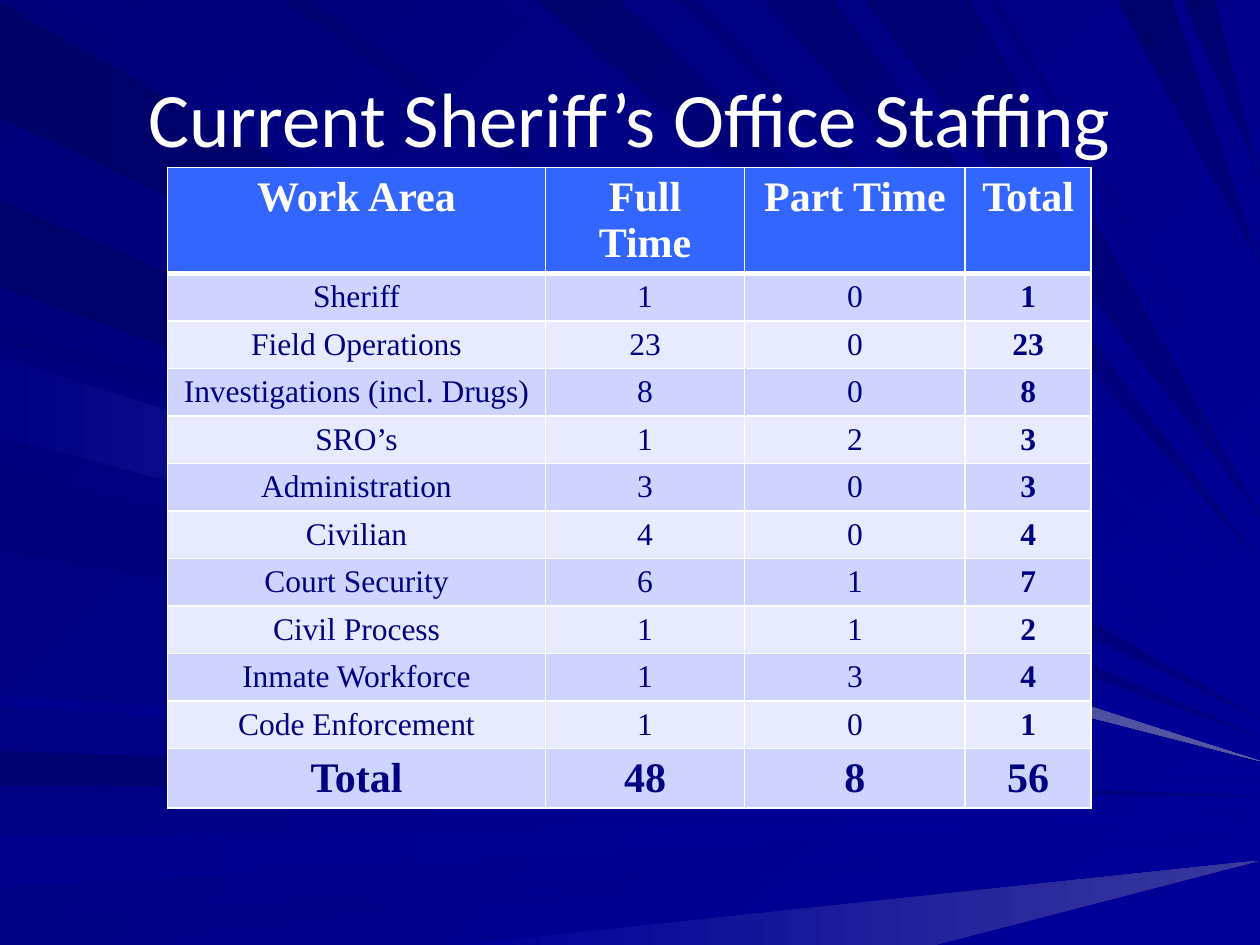
import dataclasses

import lxml.etree
import pptx
import pptx.dml.color
import pptx.enum.text
import pptx.oxml.ns
import pptx.util


@dataclasses.dataclass(frozen=True)
class Theme:
    title_font: str = "Calibri"
    table_font: str = "Times New Roman"
    title_size: int = 44
    strong_size: int = 24
    body_size: int = 18
    white: str = "FFFFFF"
    navy: str = "000080"
    blue: str = "000099"
    haze: str = "39399E"
    glow: str = "5A5AA6"
    header: str = "3366FF"
    bands: tuple = ("CED3FF", "E8EAFF")
    background: str = "000078"
    thin: int = 1
    thick: int = 3


THEME = Theme()

# The slide is a grid of 1000 columns by 750 rows
UNIT = pptx.util.Inches(0.01)
COLUMNS, ROWS = 1000, 750

TITLE_BOX = (50, 30, 900, 125)
TABLE_BOX = (133, 133, 733, 508)
COLUMN_SHARES = (3, 1.58, 1.75, 1)
HEADER_SHARE, BODY_SHARE, TOTAL_SHARE = 84, 37.7, 47

STAFFING = [
    ("Work Area", "Full Time", "Part Time", "Total"),
    ("Sheriff", 1, 0, 1),
    ("Field Operations", 23, 0, 23),
    ("Investigations (incl. Drugs)", 8, 0, 8),
    ("SRO’s", 1, 2, 3),
    ("Administration", 3, 0, 3),
    ("Civilian", 4, 0, 4),
    ("Court Security", 6, 1, 7),
    ("Civil Process", 1, 1, 2),
    ("Inmate Workforce", 1, 3, 4),
    ("Code Enforcement", 1, 0, 1),
    ("Total", 48, 8, 56),
]

# Each ray: edge it starts on, span there, row of its tip at the right, colours
RAYS = [
    ("left", 2, 93, 570, "000069", THEME.navy),
    ("top", 26, 101, 563, "00007B", THEME.blue),
    ("left", 596, 623, 632, "000071", THEME.navy),
    ("left", 665, 704, 647, "00008C", THEME.blue),
    ("left", 735, 750, 662, "000085", THEME.blue),
    ("bottom", 364, 742, 683, THEME.blue, THEME.haze),
    ("left", 258, 270, 589, "000076", THEME.blue),
    ("left", 159, 228, 585, "00006B", THEME.navy),
    ("top", 398, 416, 518, "000083", THEME.blue),
    ("top", 426, 492, 493, "00006D", THEME.blue),
    ("top", 540, 552, 463, "000073", THEME.blue),
    ("top", 606, 661, 446, "000073", THEME.navy),
    ("top", 887, 930, 210, "00006B", THEME.navy),
    ("top", 939, 964, 140, "00006D", THEME.navy),
    ("left", 278, 342, 599, "00007E", THEME.blue),
    ("left", 374, 437, 605, "00007B", THEME.blue),
    ("left", 552, 560, 622, "00008E", THEME.blue),
    ("top", 225, 247, 550, "000070", THEME.blue),
    ("top", 686, 770, 409, "000073", THEME.navy),
    ("top", 785, 792, 357, "000078", THEME.blue),
    ("left", 283, 347, 604, "000085", THEME.glow),
]


def rgb(value):
    return pptx.dml.color.RGBColor.from_string(value)


def paint_gradient(fill, first, last, angle):
    """Fill with a linear gradient; the angle runs clockwise."""
    fill.gradient()
    fill.gradient_angle = -angle % 360
    for stop, color in zip(fill.gradient_stops, (first, last)):
        stop.color.rgb = rgb(color)


def write(text_frame, text, *, font, size, color, bold=False):
    paragraph = text_frame.paragraphs[0]
    paragraph.alignment = pptx.enum.text.PP_ALIGN.CENTER
    run = paragraph.add_run()
    run.text = str(text)
    run.font.name = font
    run.font.size = pptx.util.Pt(size)
    run.font.bold = bold
    run.font.color.rgb = rgb(color)


def border(cell, **widths):
    """Draw white cell edges; widths are points by side: L, R, T, B."""
    properties = cell._tc.get_or_add_tcPr()
    qualified = pptx.oxml.ns.qn
    for index, (side, width) in enumerate(widths.items()):
        line = lxml.etree.Element(qualified(f"a:ln{side}"), w=str(pptx.util.Pt(width)))
        fill = lxml.etree.SubElement(line, qualified("a:solidFill"))
        lxml.etree.SubElement(fill, qualified("a:srgbClr"), val=THEME.white)
        properties.insert(index, line)


def add_background(slide):
    paint_gradient(slide.background.fill, THEME.background, THEME.blue, 45)
    group = slide.shapes.add_group_shape()
    for edge, start, end, tip, first, last in RAYS:
        if edge == "left":
            base = [(0, start), (0, end)]
        else:
            row = ROWS if edge == "bottom" else 0
            base = [(start, row), (end, row)]
        builder = group.shapes.build_freeform(COLUMNS, tip, scale=UNIT)
        builder.add_line_segments(base, close=True)
        ray = builder.convert_to_shape()
        ray.shadow.inherit = False
        ray.line.fill.background()
        paint_gradient(ray.fill, first, last, 45 if edge == "top" else 0)
    # Rays lie behind the title
    slide.shapes.title._element.addprevious(group._element)


def add_title(slide, box, text):
    title = slide.shapes.title
    title.left, title.top, title.width, title.height = (UNIT * value for value in box)
    title.text_frame.vertical_anchor = pptx.enum.text.MSO_ANCHOR.MIDDLE
    write(title.text_frame, text, font=THEME.title_font, size=THEME.title_size, color=THEME.white)


def add_staffing_table(slide, box, records):
    left, top, width, height = (UNIT * value for value in box)
    table = slide.shapes.add_table(len(records), len(records[0]), left, top, width, height).table
    row_shares = [HEADER_SHARE, *[BODY_SHARE] * (len(records) - 2), TOTAL_SHARE]
    for column, share in zip(table.columns, COLUMN_SHARES):
        column.width = round(width * share / sum(COLUMN_SHARES))
    for row, share in zip(table.rows, row_shares):
        row.height = round(height * share / sum(row_shares))

    last_row, last_column = len(records) - 1, len(records[0]) - 1
    for row_index, record in enumerate(records):
        is_header = row_index == 0
        is_strong = row_index in (0, last_row)
        for column_index, value in enumerate(record):
            cell = table.cell(row_index, column_index)
            cell.fill.solid()
            cell.fill.fore_color.rgb = rgb(THEME.header if is_header else THEME.bands[(row_index - 1) % 2])
            border(cell, L=THEME.thin, R=THEME.thin,
                   T=THEME.thick if row_index == 1 else THEME.thin,
                   B=THEME.thick if is_header else THEME.thin)
            write(cell.text_frame, value, font=THEME.table_font,
                  size=THEME.strong_size if is_strong else THEME.body_size,
                  color=THEME.white if is_header else THEME.navy,
                  bold=is_strong or column_index == last_column)


def main():
    presentation = pptx.Presentation()
    presentation.slide_width = UNIT * COLUMNS
    presentation.slide_height = UNIT * ROWS
    slide = presentation.slides.add_slide(presentation.slide_layouts.get_by_name("Title Only"))
    add_background(slide)
    add_title(slide, TITLE_BOX, "Current Sheriff’s Office Staffing")
    add_staffing_table(slide, TABLE_BOX, STAFFING)
    presentation.save("out.pptx")


if __name__ == "__main__":
    main()
